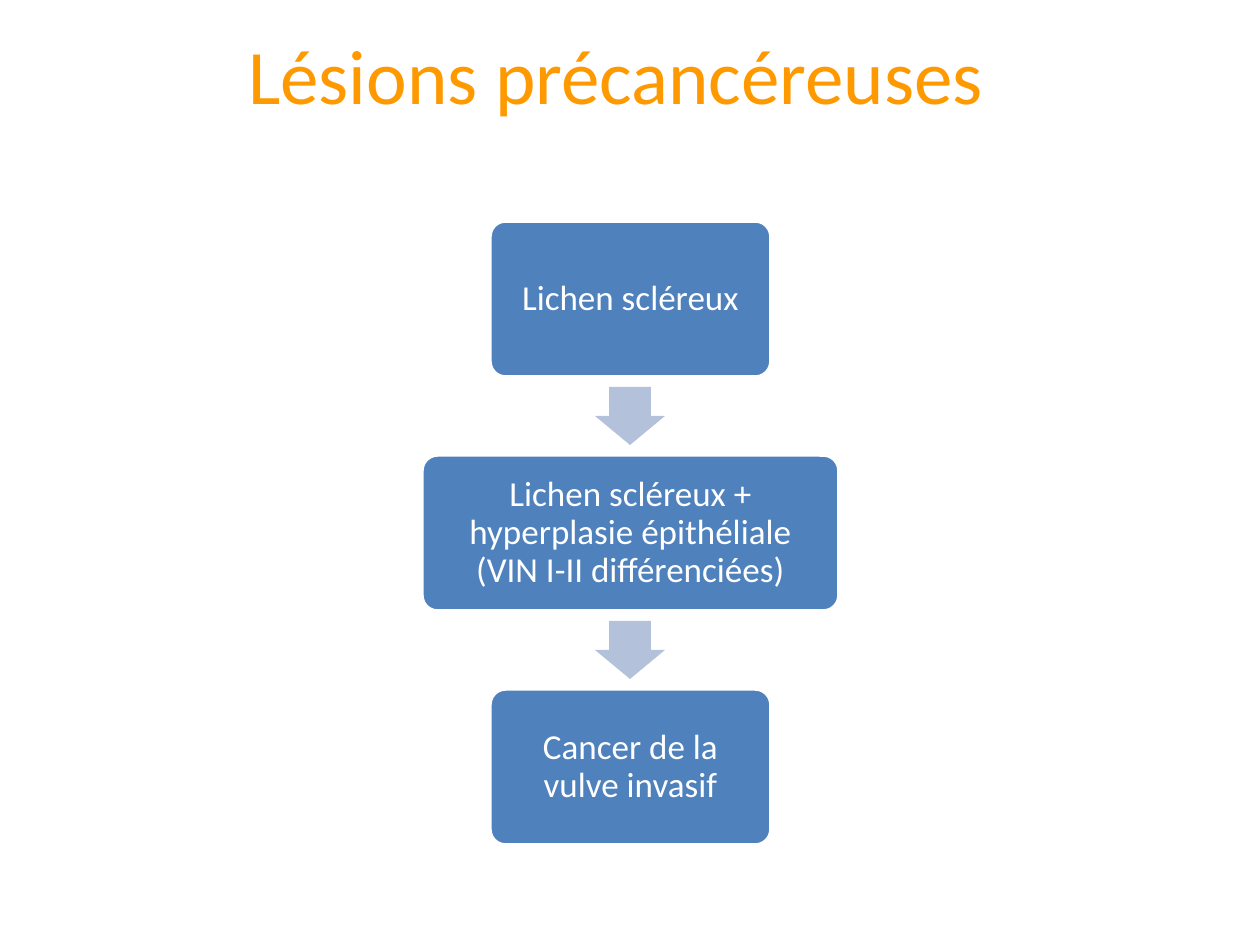
from dataclasses import dataclass

from pptx import Presentation
from pptx.dml.color import RGBColor
from pptx.enum.shapes import MSO_SHAPE as Preset
from pptx.enum.text import MSO_ANCHOR as Anchor, PP_ALIGN as Align
from pptx.util import Emu, Pt

EMU_PER_PX = 914400 // 126
FONT = "Calibri"
ORANGE, BLUE, PALE_BLUE, WHITE = "FF9900", "4F81BD", "B3C1DB", "FFFFFF"

CENTER_X = 630
FIRST_TOP = 221
STEP_PITCH = 234
STEP_HEIGHT = 156
STEP_MARGIN = 10
ARROW_LENGTH, ARROW_BREADTH = 58, 70


@dataclass(frozen=True)
class Step:
    text: str
    width: int


STEPS = [
    Step("Lichen scléreux", 281),
    Step("Lichen scléreux + hyperplasie épithéliale (VIN I-II différenciées)", 417),
    Step("Cancer de la vulve invasif", 281),
]


def px(length: int) -> Emu:
    return Emu(length * EMU_PER_PX)


def color(value: str) -> RGBColor:
    return RGBColor.from_string(value)


def write_centered(frame, text: str, size: int, text_color: str):
    frame.word_wrap = True
    frame.vertical_anchor = Anchor.MIDDLE
    paragraph = frame.paragraphs[0]
    paragraph.alignment = Align.CENTER
    run = paragraph.add_run()
    run.text = text
    run.font.name = FONT
    run.font.size = Pt(size)
    run.font.color.rgb = color(text_color)
    return paragraph


def add_filled_shape(slide, preset, width: int, height: int, top: int, fill: str):
    """Add a preset shape centred on the flow's vertical axis."""
    left = CENTER_X - width // 2
    shape = slide.shapes.add_shape(preset, px(left), px(top), px(width), px(height))
    shape.shadow.inherit = False
    shape.fill.solid()
    shape.fill.fore_color.rgb = color(fill)
    return shape


def add_step(slide, step: Step, top: int) -> None:
    shape = add_filled_shape(
        slide, Preset.ROUNDED_RECTANGLE, step.width, STEP_HEIGHT, top, BLUE)
    shape.adjustments[0] = 0.1
    shape.line.color.rgb = color(WHITE)
    shape.line.width = Pt(2)
    frame = shape.text_frame
    frame.margin_left = frame.margin_right = px(STEP_MARGIN)
    frame.margin_top = frame.margin_bottom = px(STEP_MARGIN)
    paragraph = write_centered(frame, step.text, 20, WHITE)
    paragraph.line_spacing = 0.9


def add_down_arrow(slide, middle: int) -> None:
    shape = add_filled_shape(
        slide, Preset.RIGHT_ARROW, ARROW_LENGTH, ARROW_BREADTH,
        middle - ARROW_BREADTH // 2, PALE_BLUE)
    shape.rotation = 90
    shape.adjustments[0] = 0.6
    shape.adjustments[1] = 0.5
    shape.line.fill.background()


def main() -> None:
    presentation = Presentation()
    presentation.slide_width, presentation.slide_height = px(1260), px(945)
    slide = presentation.slides.add_slide(presentation.slide_layouts[6])

    title = slide.shapes.add_textbox(px(49), px(0), px(1134), px(147))
    write_centered(title.text_frame, "Lésions précancéreuses", 44, ORANGE)

    for index, step in enumerate(STEPS):
        top = FIRST_TOP + index * STEP_PITCH
        if index:
            add_down_arrow(slide, top - (STEP_PITCH - STEP_HEIGHT) // 2)
        add_step(slide, step, top)

    presentation.save("out.pptx")


if __name__ == "__main__":
    main()
